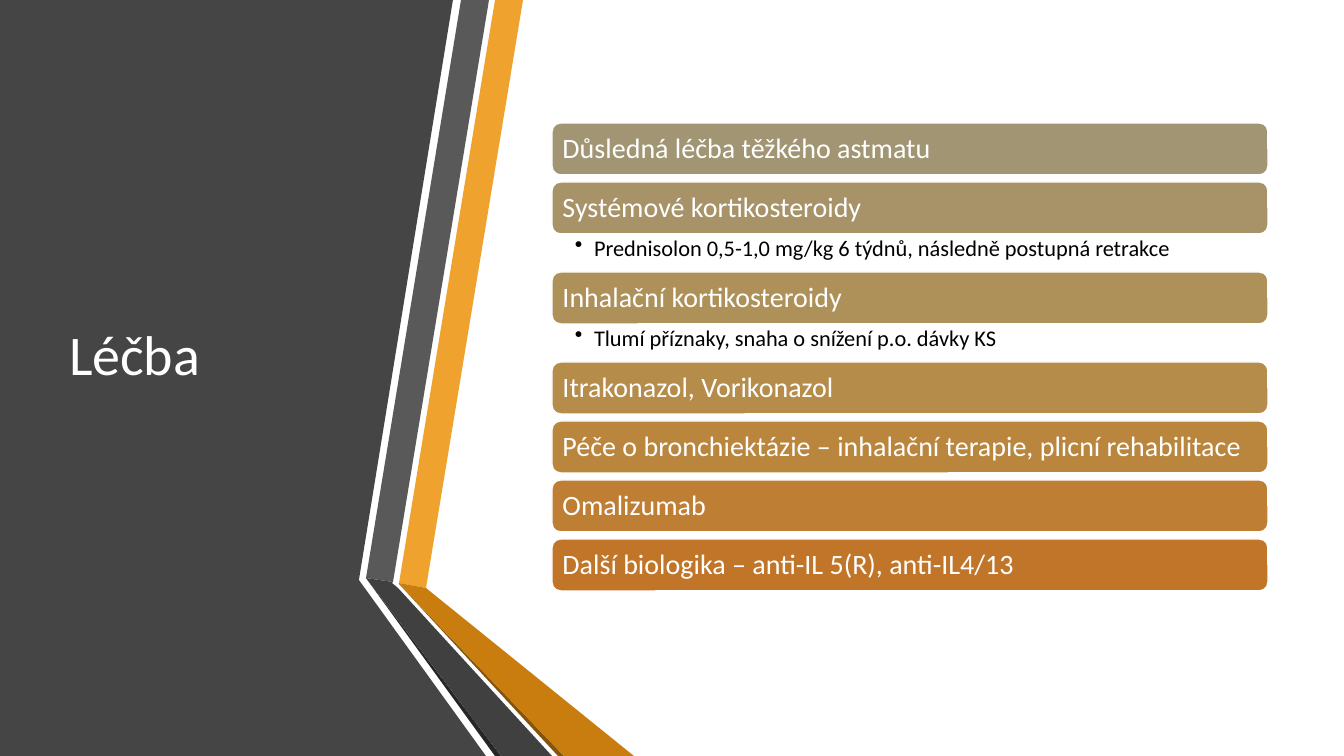
import pptx
import pptx.dml.color
import pptx.enum.shapes
import pptx.enum.text
import pptx.util
from lxml import etree

TITLE = "Léčba"
# (heading, bar colour, note under the bar)
STEPS = [
    ("Důsledná léčba těžkého astmatu", "sand", None),
    ("Systémové kortikosteroidy", "khaki",
     "Prednisolon 0,5-1,0 mg/kg 6 týdnů, následně postupná retrakce"),
    ("Inhalační kortikosteroidy", "straw",
     "Tlumí příznaky, snaha o snížení p.o. dávky KS"),
    ("Itrakonazol, Vorikonazol", "honey", None),
    ("Péče o bronchiektázie – inhalační terapie, plicní rehabilitace", "gold", None),
    ("Omalizumab", "copper", None),
    ("Další biologika – anti-IL 5(R), anti-IL4/13", "rust", None),
]
BANDS = [
    ("panel", [(0, 0), (453, 0), (359, 580), (486, 756), (0, 756)]),
    ("amber", [(399, 583), (426, 588), (523, 0), (495, 0)]),
    ("grey", [(489, 0), (461, 0), (366, 578), (393, 582)]),
    ("black", [(366, 578), (495, 756), (501, 756)]),
    ("brown", [(399, 584), (558, 756), (564, 756)]),
    ("ochre", [(399, 583), (399, 584), (564, 756), (634, 756), (426, 588)]),
    ("coal", [(552, 756), (398, 588), (392, 583), (393, 582), (366, 578), (501, 756)]),
]
HUES = {
    "panel": "454545", "amber": "F0A22E", "grey": "595959", "black": "262626",
    "brown": "85540A", "ochre": "C87D0E", "coal": "404040",
    "sand": "A19574", "khaki": "A79367", "straw": "AE9159", "honey": "B58C4A",
    "gold": "BA863E", "copper": "BE7E33", "rust": "C17529",
    "white": "FFFFFF", "ink": "000000",
}
WIDE, HIGH = 1344, 756
SCALE = 12192000 / WIDE
LEFT, TOP, BAR_W, BAR_H = 552, 123, 716, 52
PITCH, NOTE_H, HANG = 59, 31, 19


def px(n):
    return pptx.util.Emu(round(n * SCALE))


def hue(name):
    return pptx.dml.color.RGBColor.from_string(HUES[name])


def paint(shape, fill, line=None):
    shape.shadow.inherit = False
    shape.fill.solid()
    shape.fill.fore_color.rgb = hue(fill)
    if line:
        shape.line.color.rgb = hue(line)
        shape.line.width = pptx.util.Pt(1)
    else:
        shape.line.fill.background()


def write(shape, text, size=20, color="white", inset=(8, 8, 8, 8),
          anchor="MIDDLE", bullet=False):
    frame = shape.text_frame
    frame.word_wrap = True
    frame.auto_size = pptx.enum.text.MSO_AUTO_SIZE.NONE
    frame.vertical_anchor = pptx.enum.text.MSO_ANCHOR[anchor]
    (frame.margin_left, frame.margin_top,
     frame.margin_right, frame.margin_bottom) = map(px, inset)
    para = frame.paragraphs[0]
    para.alignment = pptx.enum.text.PP_ALIGN.LEFT
    para.line_spacing = 0.9
    if bullet:
        props = para._p.get_or_add_pPr()
        props.set("marL", str(px(HANG)))
        props.set("indent", str(-px(HANG)))
        mark = etree.SubElement(props, pptx.oxml.ns.qn("a:buChar"))
        mark.set("char", "•")
    run = para.add_run()
    run.text = text
    run.font.name = "Calibri"
    run.font.size = pptx.util.Pt(size)
    run.font.color.rgb = hue(color)


def main():
    deck = pptx.Presentation()
    deck.slide_width, deck.slide_height = px(WIDE), px(HIGH)
    slide = deck.slides.add_slide(deck.slide_layouts[5])
    shapes = slide.shapes

    for name, (start, *rest) in BANDS:
        path = shapes.build_freeform(*start, scale=SCALE)
        path.add_line_segments(rest, close=True)
        paint(path.convert_to_shape(), name)

    title = shapes.title
    title.left, title.top, title.width, title.height = map(px, (59, 76, 306, 562))
    write(title, TITLE, size=40, inset=(10, 5, 10, 5))
    shapes._spTree.append(title._element)  # bring in front of the panel

    top = TOP
    for head, color, note in STEPS:
        bar = shapes.add_shape(pptx.enum.shapes.MSO_SHAPE.ROUNDED_RECTANGLE,
                               *map(px, (LEFT, top, BAR_W, BAR_H)))
        paint(bar, color, line="white")
        write(bar, head)
        if note:
            box = shapes.add_textbox(*map(px, (LEFT, top + BAR_H, BAR_W, NOTE_H + 5)))
            write(box, note, size=16, color="ink", inset=(23, 3, 16, 3),
                  anchor="TOP", bullet=True)
            top += NOTE_H
        top += PITCH

    deck.save("out.pptx")


if __name__ == "__main__":
    main()
